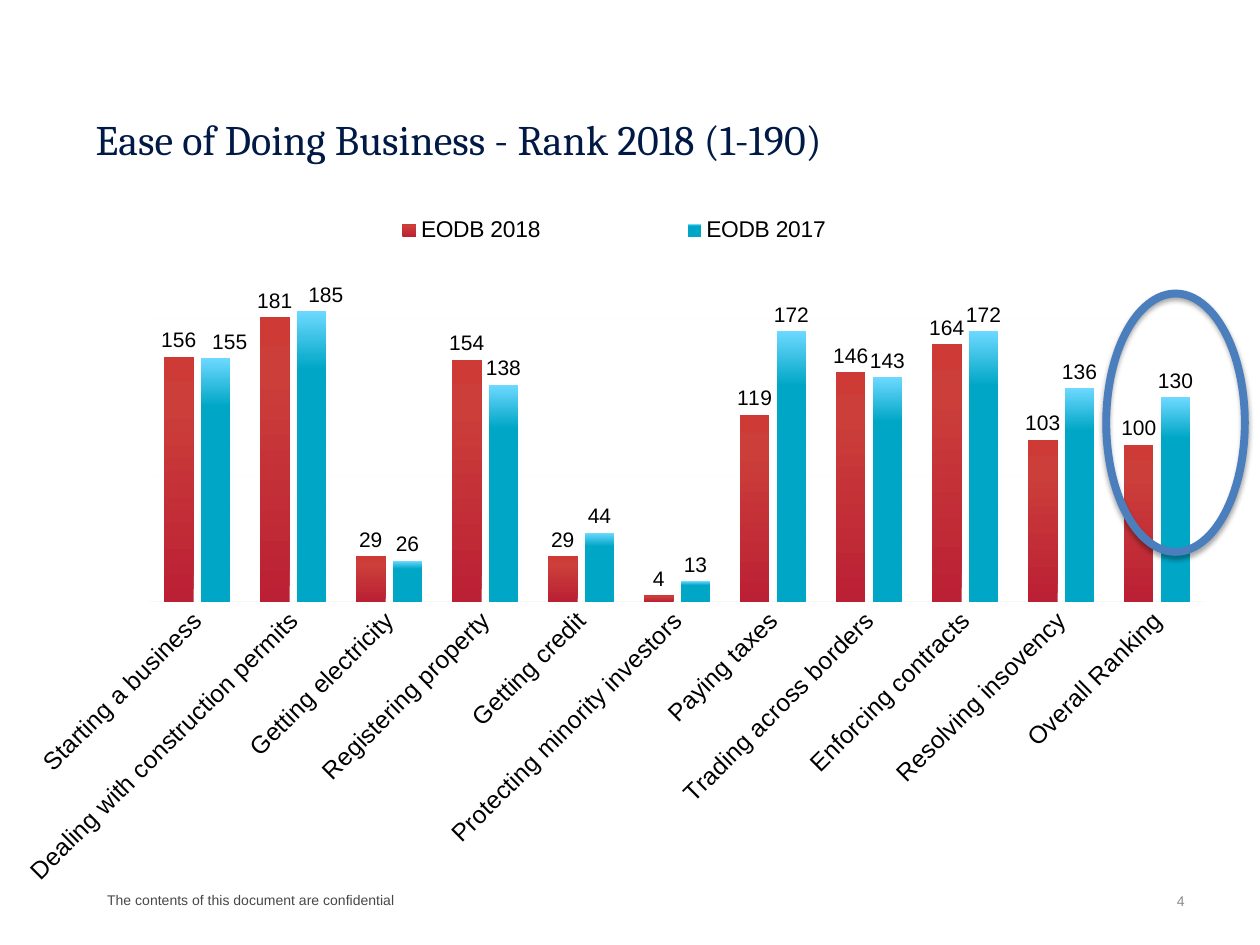
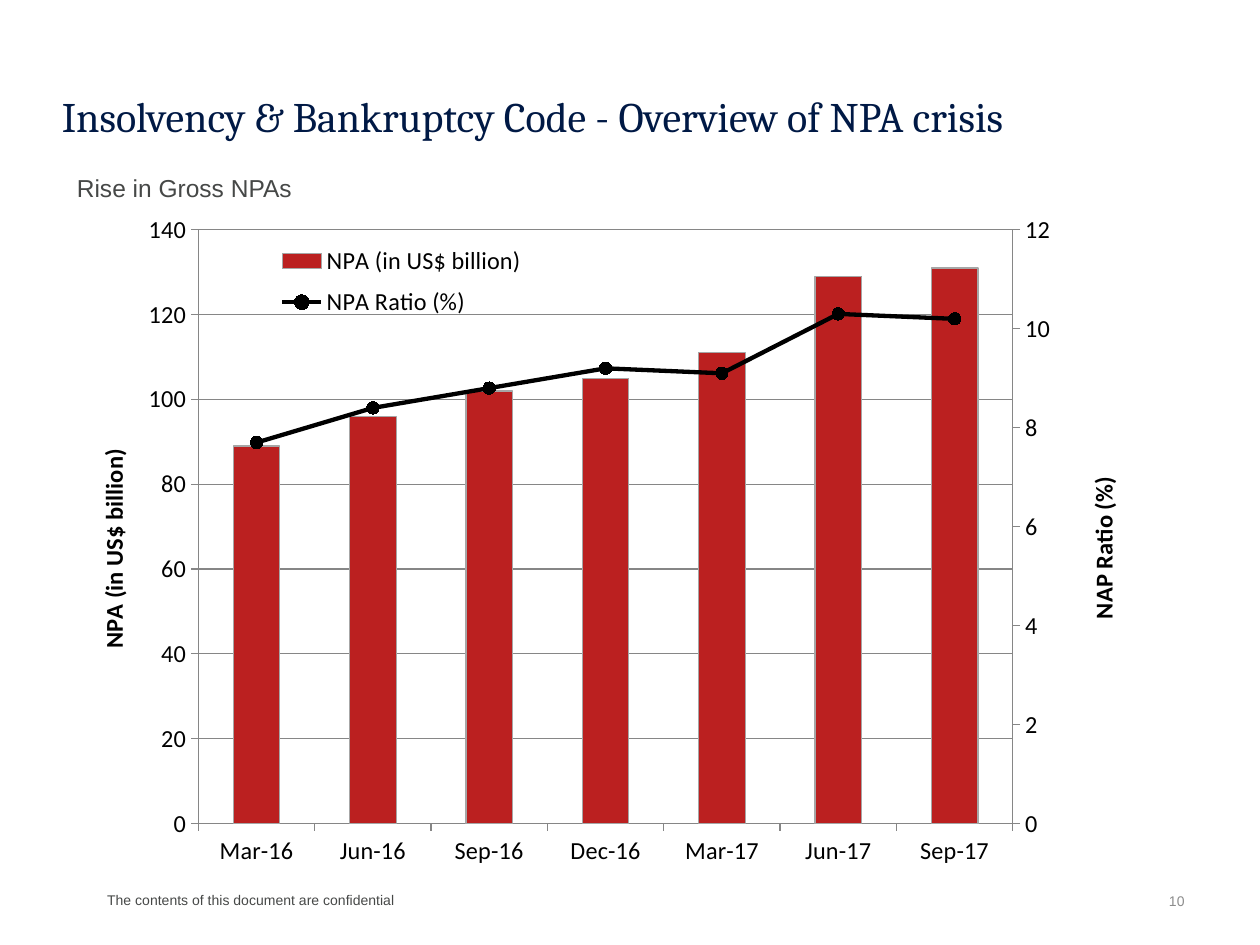
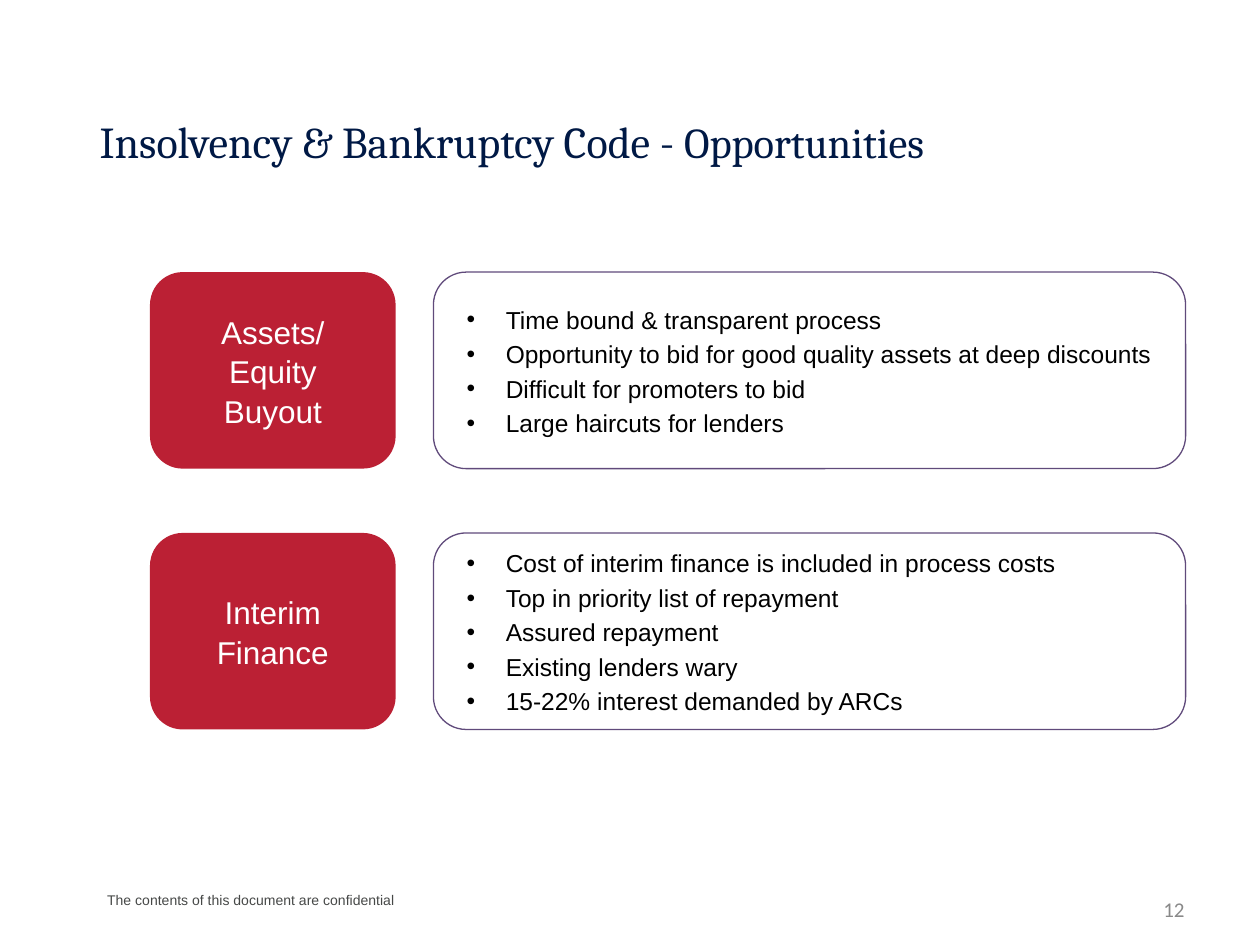
from copy import deepcopy

from pptx import Presentation
from pptx import util as u
from pptx.chart import data as cd
from pptx.dml.color import RGBColor
from pptx.enum import chart as ch, shapes, text
from pptx.oxml import parse_xml
from pptx.oxml.ns import nsdecls, qn

COLORS = {
    "navy": "001945", "grey": "464847", "number": "8C8C8C", "pale number": "898989",
    "black": "000000", "white": "FFFFFF", "crimson": "BB2034", "purple": "604A7B",
    "ring": "4B7EBC", "axis": "F8F8F8", "faint grid": "FEFEFE", "grid": "868686",
    "npa bar": "BB2020", "bar edge": "A6A6A6",
}
GRADIENTS = [
    [(0, "BB2034"), (80, "CB3E3A"), (100, "CE3B37")],
    [(0, "00A6C6"), (80, "00A6C6"), (100, "6DD9FF")],
]
FOOTER = "The contents of this document are confidential"

RANKS = {
    "Starting a business": (156, 155), "Dealing with construction permits": (181, 185),
    "Getting electricity": (29, 26), "Registering property": (154, 138),
    "Getting credit": (29, 44), "Protecting minority investors": (4, 13),
    "Paying taxes": (119, 172), "Trading across borders": (146, 143),
    "Enforcing contracts": (164, 172), "Resolving insovency": (103, 136),
    "Overall Ranking": (100, 130),
}
NPAS = {
    "Mar-16": (89, 7.7), "Jun-16": (96, 8.4), "Sep-16": (102, 8.8), "Dec-16": (105, 9.2),
    "Mar-17": (111, 9.1), "Jun-17": (129, 10.3), "Sep-17": (131, 10.2),
}
OPPORTUNITIES = [
    ("Assets/\nEquity\nBuyout", [
        "Time bound & transparent process",
        "Opportunity to bid for good quality assets at deep discounts",
        "Difficult for promoters to bid",
        "Large haircuts for lenders"]),
    ("Interim Finance", [
        "Cost of interim finance is included in process costs",
        "Top in priority list of repayment",
        "Assured repayment",
        "Existing lenders wary",
        "15-22% interest demanded by ARCs"]),
]


def rgb(name):
    return RGBColor.from_string(COLORS[name])


def box_of(*lengths):
    return [u.Inches(length) for length in lengths]


def style(font, size, color, name="Arial"):
    font.size, font.name = u.Pt(size), name
    font.color.rgb = rgb(color)


def outline(line, color, width):
    line.color.rgb = rgb(color)
    line.width = u.Pt(width)


# Shared slide parts

def place(placeholder, box):
    placeholder.left, placeholder.top, placeholder.width, placeholder.height = box_of(*box)
    placeholder.text_frame.auto_size = text.MSO_AUTO_SIZE.NONE


def add_title(slide, box, parts, anchor=text.MSO_ANCHOR.MIDDLE):
    title = slide.shapes.title
    place(title, box)
    title.text_frame.vertical_anchor = anchor
    heading = title.text_frame.paragraphs[0]
    heading.alignment = text.PP_ALIGN.LEFT
    for words, size in parts:
        run = heading.add_run()
        run.text = words
        style(run.font, size, "navy", "Cambria")


def add_label(slide, box, words, align, inset, **look):
    frame = slide.shapes.add_textbox(*box_of(*box)).text_frame
    frame.word_wrap = True
    frame.vertical_anchor = text.MSO_ANCHOR.MIDDLE
    if not inset:
        frame.margin_left = frame.margin_right = frame.margin_top = frame.margin_bottom = 0
    frame.text = words
    frame.paragraphs[0].alignment = align
    style(frame.paragraphs[0].runs[0].font, **look)


def add_footer(slide, number, box=(7.17, 6.95, 2.33, 0.4), size=8, color="number", name="Arial"):
    add_label(slide, (0.85, 7.06, 3.75, 0.17), FOOTER, text.PP_ALIGN.LEFT, False,
              size=8, color="grey")
    add_label(slide, box, str(number), text.PP_ALIGN.RIGHT, True,
              size=size, color=color, name=name)


# Chart helpers

def set_layout(parent, x, y, w=None, h=None, inner=False, offset=False):
    """Give a chart part a manual layout, in fractions of the chart."""
    for old in parent.findall(qn("c:layout")):
        parent.remove(old)
    marks = '<c:layoutTarget val="inner"/>' if inner else ""
    if not offset:
        marks += '<c:xMode val="edge"/><c:yMode val="edge"/>'
    marks += "".join(f'<c:{key} val="{value}"/>'
                     for key, value in zip("xywh", (x, y, w, h)) if value is not None)
    layout = parse_xml(f'<c:layout {nsdecls("c")}><c:manualLayout>{marks}'
                       "</c:manualLayout></c:layout>")
    parent.insert(0 if inner else 1, layout)


def add_column_chart(slide, box, names, rows, size, font, gap, plot_box, legend, legend_box):
    table = cd.CategoryChartData()
    table.categories = list(rows)
    for name, values in zip(names, zip(*rows.values())):
        table.add_series(name, values)
    chart = slide.shapes.add_chart(
        ch.XL_CHART_TYPE.COLUMN_CLUSTERED, *box_of(*box), table).chart
    chart.has_title = False
    style(chart.font, size, "black", font)
    chart.element.find(qn("c:chart")).addnext(parse_xml(
        f'<c:spPr {nsdecls("c", "a")}><a:noFill/><a:ln><a:noFill/></a:ln></c:spPr>'))
    chart.plots[0].gap_width = gap
    chart.plots[0].vary_by_categories = False
    chart.has_legend = True
    chart.legend.position = legend
    chart.legend.include_in_layout = False
    style(chart.legend.font, size, "black", font)
    set_layout(chart.element.find(".//" + qn("c:legend")), *legend_box)
    set_layout(chart.element.find(".//" + qn("c:plotArea")), *plot_box, inner=True)
    return chart


def scale(axis, top, step, grid):
    axis.minimum_scale, axis.maximum_scale, axis.major_unit = 0, top, step
    axis.has_major_gridlines = True
    outline(axis.major_gridlines.format.line, grid, 0.75)


def fill_upwards(series, element, stops):
    series.format.fill.solid()
    series.format.fill.fore_color.rgb = RGBColor.from_string(stops[0][1])
    marks = "".join(f'<a:gs pos="{at * 1000}"><a:srgbClr val="{color}"/></a:gs>'
                    for at, color in stops)
    solid = element.find(".//" + qn("a:solidFill"))
    solid.getparent().replace(solid, parse_xml(
        f'<a:gradFill {nsdecls("a")}><a:gsLst>{marks}</a:gsLst>'
        '<a:lin ang="16200000" scaled="0"/></a:gradFill>'))


def add_rank_chart(slide, box):
    chart = add_column_chart(
        slide, box, ("EODB 2018", "EODB 2017"), RANKS, 13, "Arial", 100,
        (0.105, 0.207, 0.886, 0.363), ch.XL_LEGEND_POSITION.TOP, (0.2, 0.116, 0.59, 0.05))
    plot = chart.plots[0]
    plot.overlap = -24

    topics = chart.category_axis
    topics.major_tick_mark = ch.XL_TICK_MARK.NONE
    style(topics.tick_labels.font, 14, "black")
    outline(topics.format.line, "axis", 1)
    slant = chart.element.find(".//" + qn("c:catAx")).find(qn("c:txPr")).find(qn("a:bodyPr"))
    slant.set("rot", "-2700000")
    slant.set("vert", "horz")
    scale(chart.value_axis, 200, 20, "faint grid")
    chart.value_axis.visible = False

    elements = list(chart.element.iter(qn("c:ser")))
    for series, element, stops in zip(plot.series, elements, GRADIENTS):
        fill_upwards(series, element, stops)
        labels = series.data_labels
        labels.show_value = True
        labels.position = ch.XL_LABEL_POSITION.OUTSIDE_END
        style(labels.font, 12, "black")

    # Nudge the first two 2017 labels clear of the 2018 ones
    for index in (0, 1):
        label = plot.series[1].points[index].data_label
        style(label.font, 12, "black")
        label.position = ch.XL_LABEL_POSITION.OUTSIDE_END
    for label in elements[1].iter(qn("c:dLbl")):
        set_layout(label, 0.012, 0, offset=True)


def add_ring(slide, box):
    ring = slide.shapes.add_shape(shapes.MSO_SHAPE.OVAL, *box_of(*box))
    ring.fill.background()
    outline(ring.line, "ring", 4.5)
    ring.shadow.inherit = False
    ring.element.spPr.find(qn("a:effectLst")).append(parse_xml(
        f'<a:outerShdw {nsdecls("a")} blurRad="{u.Pt(3.1)}" dist="{u.Pt(1.8)}" dir="5400000" '
        'rotWithShape="0"><a:srgbClr val="000000"><a:alpha val="35000"/></a:srgbClr>'
        "</a:outerShdw>"))


def move_to_right_axis(chart, title, top, step):
    """Turn the last series into a line on a second value axis."""
    area = chart.element.find(".//" + qn("c:plotArea"))
    bars, months, amounts = (area.find(qn(tag)) for tag in ("c:barChart", "c:catAx", "c:valAx"))
    ratio = bars.findall(qn("c:ser"))[-1]
    for mark in ratio.findall(qn("c:invertIfNegative")):
        ratio.remove(mark)
    lines = parse_xml(
        f'<c:lineChart {nsdecls("c")}><c:grouping val="standard"/><c:varyColors val="0"/>'
        '<c:marker val="1"/><c:axId val="501"/><c:axId val="502"/></c:lineChart>')
    lines.insert(2, ratio)
    bars.addnext(lines)

    right, hidden = deepcopy(amounts), deepcopy(months)
    right.remove(right.find(qn("c:majorGridlines")))
    right.find(".//" + qn("a:t")).text = title
    changes = [
        (right, {"axId": 502, "crossAx": 501, "axPos": "r", "crosses": "max",
                 "max": top, "majorUnit": step}),
        (hidden, {"axId": 501, "crossAx": 502, "delete": 1}),
    ]
    for axis, values in changes:
        for tag, value in values.items():
            axis.find(".//" + qn("c:" + tag)).set("val", str(value))
    amounts.addnext(right)
    right.addnext(hidden)
    return right


def add_npa_chart(slide, box):
    chart = add_column_chart(
        slide, box, ("NPA (in US$ billion)", "NPA Ratio (%)"), NPAS, 14, "Calibri", 150,
        (0.113, 0.022, 0.79, 0.834), ch.XL_LEGEND_POSITION.RIGHT, (0.18, 0.03, 0.26, 0.13))
    amounts = chart.value_axis
    scale(amounts, 140, 20, "grid")
    amounts.tick_labels.number_format = "0"
    amounts.tick_labels.number_format_is_linked = False
    for axis in (amounts, chart.category_axis):
        axis.major_tick_mark = ch.XL_TICK_MARK.OUTSIDE
        outline(axis.format.line, "grid", 0.75)

    caption = amounts.axis_title.text_frame
    caption.text = "NPA (in US$ billion)"
    caption_font = caption.paragraphs[0].runs[0].font
    style(caption_font, 14, "black", "Calibri")
    caption_font.bold = True
    left = chart.element.find(".//" + qn("c:valAx"))
    turn = left.find(qn("c:title")).find(".//" + qn("a:bodyPr"))
    turn.set("rot", "-5400000")
    turn.set("vert", "horz")
    right = move_to_right_axis(chart, "NAP Ratio (%)", 12, 2)
    set_layout(left.find(qn("c:title")), 0.01, 0.32)
    set_layout(right.find(qn("c:title")), 0.97, 0.36)

    npa, ratio = (plot.series[0] for plot in chart.plots)
    npa.format.fill.solid()
    npa.format.fill.fore_color.rgb = rgb("npa bar")
    outline(npa.format.line, "bar edge", 0.75)
    ratio.smooth = False
    outline(ratio.format.line, "black", 2.5)
    ratio.marker.style, ratio.marker.size = ch.XL_MARKER_STYLE.CIRCLE, 7
    ratio.marker.format.fill.solid()
    ratio.marker.format.fill.fore_color.rgb = rgb("black")
    outline(ratio.marker.format.line, "black", 0.75)


# Opportunity rows

def add_card(slide, box, lines, size, color, align):
    card = slide.shapes.add_shape(shapes.MSO_SHAPE.ROUNDED_RECTANGLE, *box_of(*box))
    card.shadow.inherit = False
    frame = card.text_frame
    frame.word_wrap = True
    frame.vertical_anchor = text.MSO_ANCHOR.MIDDLE
    frame.text = lines
    for paragraph in frame.paragraphs:
        paragraph.alignment = align
        paragraph.line_spacing = 1.05
        style(paragraph.runs[0].font, size, color)
    return card


def add_bullets(paragraph):
    props = paragraph._p.get_or_add_pPr()
    props.set("marL", str(u.Inches(0.4)))
    props.set("indent", str(u.Inches(-0.31)))
    props.append(parse_xml(f'<a:buClr {nsdecls("a")}><a:srgbClr val="{COLORS["black"]}"/></a:buClr>'))
    props.append(parse_xml(f'<a:buFont {nsdecls("a")} typeface="Arial"/>'))
    props.append(parse_xml(f'<a:buChar {nsdecls("a")} char="•"/>'))
    paragraph.space_after = u.Pt(2)


def add_opportunity(slide, box, name, points):
    left, top, width, height = box
    name_width, gap = 1.95, 0.3
    heading = add_card(slide, (left, top, name_width, height), name, 18, "white",
                       text.PP_ALIGN.CENTER)
    heading.fill.solid()
    heading.fill.fore_color.rgb = rgb("crimson")
    heading.line.fill.background()

    shift = name_width + gap
    details = add_card(slide, (left + shift, top, width - shift, height), "\n".join(points),
                       14, "black", text.PP_ALIGN.LEFT)
    details.fill.background()
    outline(details.line, "purple", 0.75)
    for paragraph in details.text_frame.paragraphs:
        add_bullets(paragraph)


# Slides

def build_rank_slide(prs):
    slide = prs.slides.add_slide(prs.slide_layouts[5])
    add_title(slide, (0.66, 0.68, 8.81, 0.84), [("Ease of Doing Business - Rank 2018 (1-190)", 24)])
    add_footer(slide, 4)
    add_rank_chart(slide, (0.19, 0.86, 9.46, 6.87))
    add_ring(slide, (8.78, 2.33, 1.1, 2.05))


def build_npa_slide(prs):
    slide = prs.slides.add_slide(prs.slide_layouts[1])
    add_title(slide, (0.39, 0.5, 8.81, 0.84),
              [("Insolvency & Bankruptcy Code - Overview of NPA crisis", 24)])
    subtitle = slide.placeholders[1]
    place(subtitle, (0.51, 1.32, 8.81, 0.38))
    subtitle.text_frame.text = "Rise in Gross NPAs"
    line = subtitle.text_frame.paragraphs[0]
    props = line._p.get_or_add_pPr()
    props.set("marL", "0")
    props.set("indent", "0")
    props.append(parse_xml(f'<a:buNone {nsdecls("a")}/>'))
    line.space_before = u.Pt(0)
    style(line.runs[0].font, 14, "grey")
    add_footer(slide, 10)
    add_npa_chart(slide, (0.65, 1.7, 8.29, 5.65))


def build_opportunity_slide(prs):
    slide = prs.slides.add_slide(prs.slide_layouts[5])
    add_title(slide, (0.69, 0.86, 8.81, 0.84),
              [("Insolvency & Bankruptcy Code - ", 25.2), ("Opportunities", 24.3)],
              text.MSO_ANCHOR.TOP)
    add_footer(slide, 12, (7.17, 7.08, 2.33, 0.27), 12, "pale number", "Calibri")
    for row, (name, points) in enumerate(OPPORTUNITIES):
        add_opportunity(slide, (1.19, 2.16 + row * 2.07, 8.22, 1.56), name, points)


def main():
    prs = Presentation()
    prs.slide_width, prs.slide_height = box_of(10, 7.5)
    build_rank_slide(prs)
    build_npa_slide(prs)
    build_opportunity_slide(prs)
    prs.save("out.pptx")


if __name__ == "__main__":
    main()
